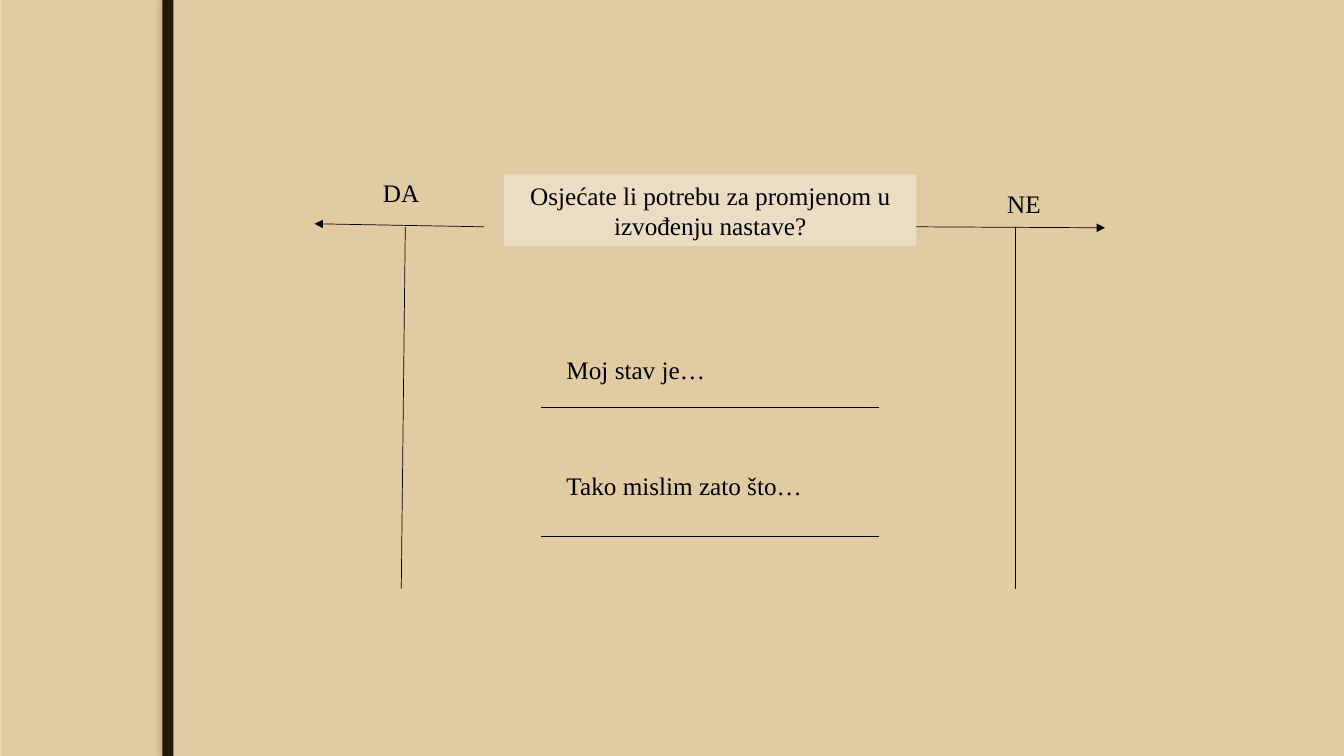
from dataclasses import dataclass
from lxml.etree import SubElement as Sub
from pptx import Presentation as Deck
from pptx.dml.color import RGBColor as Rgb
from pptx.enum.shapes import MSO_CONNECTOR as Link, MSO_SHAPE as Form
from pptx.enum.text import MSO_ANCHOR as Anchor, PP_ALIGN as Align
from pptx.oxml.ns import qn
from pptx.util import Emu, Pt

SCALE = 9144


@dataclass(frozen=True)
class Theme:
    back: str = "EBDDC3"
    sand: str = "E0CBA3"
    bar: str = "20190B"
    shade: str = "766E60"
    ink: str = "000000"
    font: str = "Times New Roman"
    size: float = 18
    rule: float = 0.5


def px(*vals):
    return [Emu(val * SCALE) for val in vals]


class Board:
    def __init__(self, slide, theme):
        self.slide = slide
        self.theme = theme
        self.paint(slide.background.fill, theme.back)

    def paint(self, fill, color):
        fill.solid()
        fill.fore_color.rgb = Rgb.from_string(color)

    def rect(self, box, color):
        shape = self.slide.shapes.add_shape(Form.RECTANGLE, *px(*box))
        shape.shadow.inherit = False
        self.paint(shape.fill, color)
        shape.line.fill.background()
        return shape

    def shade(self, shape):
        effects = shape._element.spPr.find(qn("a:effectLst"))
        outer = Sub(effects, qn("a:outerShdw"), blurRad=str(Pt(3)),
                    dist=str(Pt(3)), dir="10800000", rotWithShape="0")
        color = Sub(outer, qn("a:srgbClr"), val=self.theme.shade)
        Sub(color, qn("a:alpha"), val="25000")

    def letter(self, shape, text, align=Align.LEFT, anchor=Anchor.TOP):
        frame = shape.text_frame
        frame.word_wrap = True
        frame.vertical_anchor = anchor
        frame.text = text
        para = frame.paragraphs[0]
        para.alignment = align
        font = para.runs[0].font
        font.name = self.theme.font
        font.size = Pt(self.theme.size)
        font.color.rgb = Rgb.from_string(self.theme.ink)

    def label(self, box, text):
        self.letter(self.slide.shapes.add_textbox(*px(*box)), text)

    def line(self, start, end, arrow=False):
        rule = self.slide.shapes.add_connector(Link.STRAIGHT, *px(*start, *end))
        rule.line.width = Pt(self.theme.rule)
        self.paint(rule.line.fill, self.theme.ink)
        props = rule._element.spPr
        if arrow:
            Sub(props.find(qn("a:ln")), qn("a:tailEnd"), type="triangle")
        Sub(props, qn("a:effectLst"))


def main():
    deck = Deck()
    deck.slide_width, deck.slide_height = px(1333, 750)
    board = Board(deck.slides.add_slide(deck.slide_layouts[6]), Theme())
    theme = board.theme

    board.rect((1, 0, 1332, 750), theme.sand)
    board.shade(board.rect((161, 0, 11, 750), theme.bar))
    quest = board.rect((500, 173, 409, 71), theme.back)
    board.letter(quest, "Osjećate li potrebu za promjenom u izvođenju nastave?",
                 Align.CENTER, Anchor.MIDDLE)

    board.line((909, 225), (1096, 226), arrow=True)
    board.line((480, 225), (312, 222), arrow=True)
    for top, foot in ((402, 398), (1007, 1007)):
        board.line((top, 225), (foot, 584))
    for y in (404, 532):
        board.line((537, y), (872, y))

    board.label((370, 171, 72, 40), "DA")
    board.label((989, 182, 75, 40), "NE")
    for y, text in ((347, "Moj stav je…"), (462, "Tako mislim zato što…")):
        board.label((552, y, 311, 40), text)

    deck.save("out.pptx")


if __name__ == "__main__":
    main()
